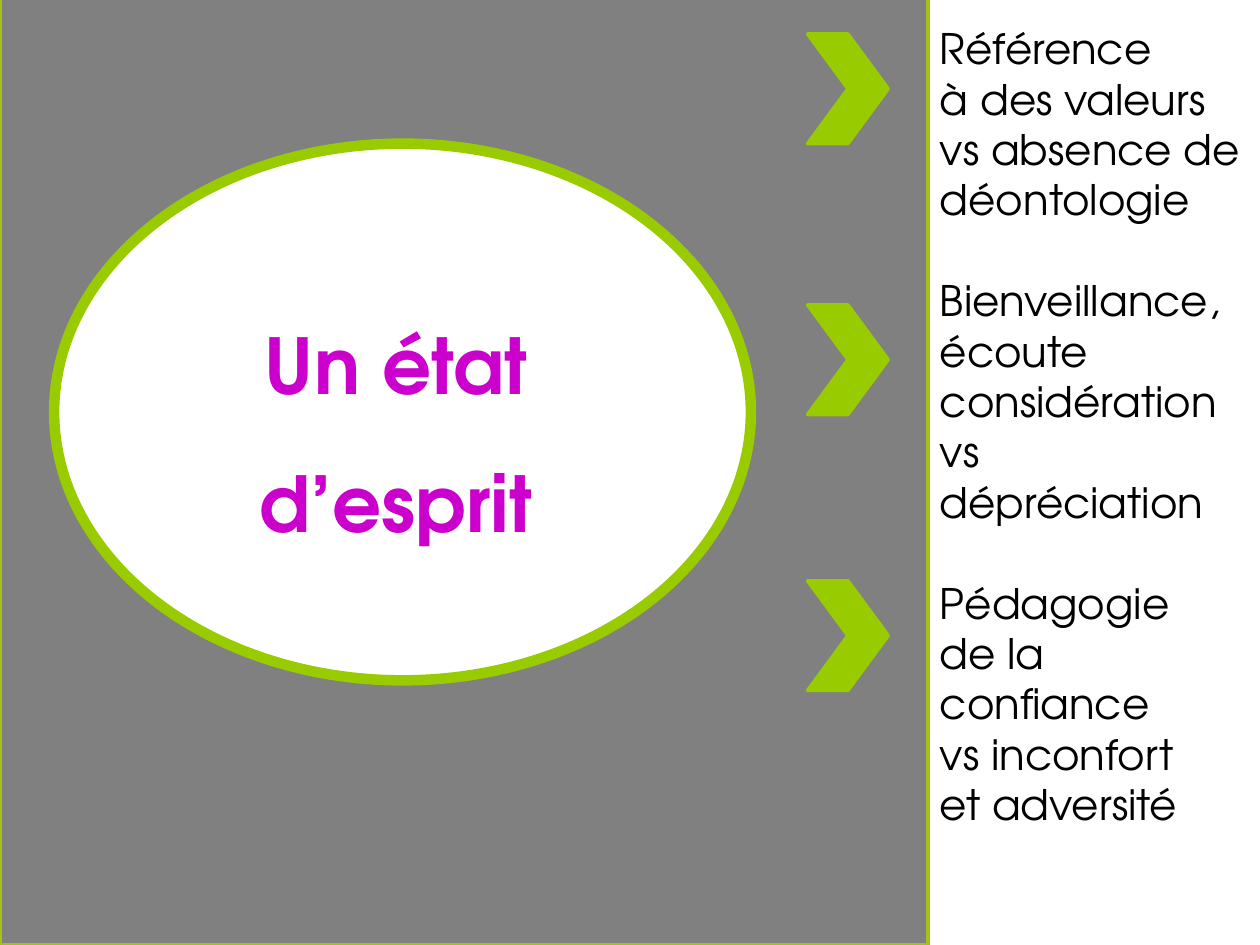
import pptx
import pptx.util
import pptx.dml.color
import pptx.enum.shapes
import pptx.enum.text
from lxml import etree
from pptx.util import Inches, Pt

COLORS = {
    "panel": "808080",
    "panel_edge": "A4C01A",
    "green": "99CC00",
    "white": "FFFFFF",
    "title": "CC00CC",
    "text": "000000",
}
FONT = "TeX Gyre Adventor"
SHAPES = pptx.enum.shapes.MSO_SHAPE

deck = pptx.Presentation()
deck.slide_width, deck.slide_height = Inches(10), Inches(7.5)
page = deck.slides.add_slide(deck.slide_layouts[1])


def add_outlined(kind, left, top, width, height, fill, line, weight):
    shape = page.shapes.add_shape(
        kind, Inches(left), Inches(top), Inches(width), Inches(height))
    shape.shadow.inherit = False
    shape.fill.solid()
    shape.fill.fore_color.rgb = pptx.dml.color.RGBColor.from_string(COLORS[fill])
    shape.line.color.rgb = pptx.dml.color.RGBColor.from_string(COLORS[line])
    shape.line.width = Pt(weight)
    return shape


def place_text(box, left, top, width, height, size, color, bold):
    """Move a filled placeholder to the front and format its text."""
    box.left, box.top = Inches(left), Inches(top)
    box.width, box.height = Inches(width), Inches(height)
    page.shapes._spTree.append(box._element)
    frame = box.text_frame
    frame.word_wrap = True
    frame.auto_size = pptx.enum.text.MSO_AUTO_SIZE.NONE
    frame.vertical_anchor = pptx.enum.text.MSO_ANCHOR.TOP
    for para in frame.paragraphs:
        para.space_before = Pt(0)
        for span in para.runs:
            span.font.name = FONT
            span.font.size = Pt(size)
            span.font.bold = bold
            span.font.color.rgb = pptx.dml.color.RGBColor.from_string(COLORS[color])


# Grey panel and central ellipse
panel = add_outlined(SHAPES.RECTANGLE, -0.07, 0.06, 7.51, 7.36,
                     "panel", "panel_edge", 2)
panel.rotation = 270
add_outlined(SHAPES.OVAL, 0.43, 1.14, 5.53, 4.26, "white", "green", 6)

# One chevron per group of values
for top in (0.27, 2.42, 4.61):
    add_outlined(SHAPES.CHEVRON, 6.41, top, 0.64, 0.87, "green", "green", 2)

title = page.shapes.title
title.text_frame.text = "Un état d’esprit"
place_text(title, 1.77, 2.1, 2.75, 2.32, 44, "title", True)
title_para = title.text_frame.paragraphs[0]
title_para.alignment = pptx.enum.text.PP_ALIGN.CENTER
title_para.line_spacing = 1.5

groups = [
    ["Référence", "à des valeurs", "vs absence de déontologie"],
    ["Bienveillance,", "écoute", "considération", "vs dépréciation"],
    ["Pédagogie", "de la confiance", "vs inconfort", "et adversité"],
]
values = page.placeholders[1]
values.text_frame.text = "\n".join(line for group in groups for line in group)
place_text(values, 7.36, 0.13, 2.64, 6.56, 24, "text", False)

group_starts = [group[0] for group in groups[1:]]
for para in values.text_frame.paragraphs:
    if para.text in group_starts:
        para.space_before = Pt(28.8)
    properties = para._p.get_or_add_pPr()
    properties.set("marL", "0")
    properties.set("indent", "0")
    etree.SubElement(properties, pptx.oxml.ns.qn("a:buNone"))

deck.save("out.pptx")
